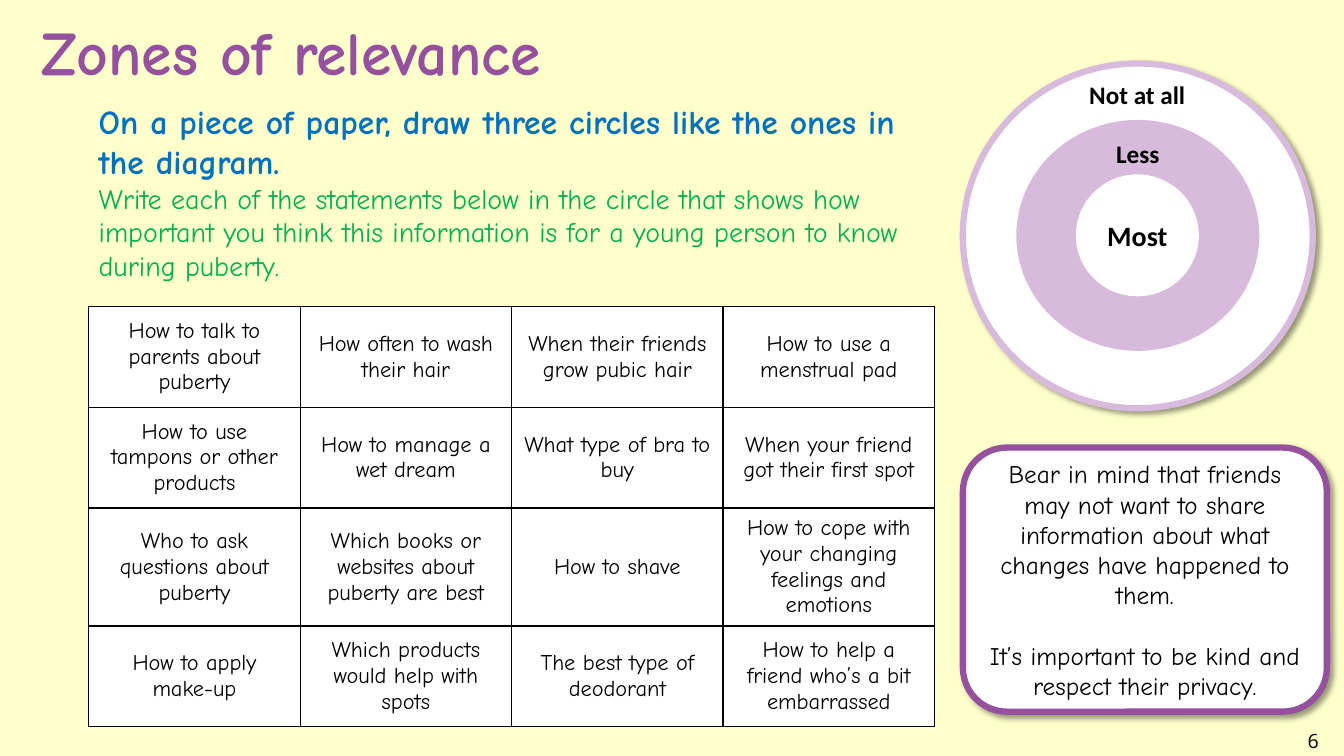
"""Build the 'Zones of relevance' activity slide."""
from lxml import etree
from pptx import Presentation
from pptx.dml.color import RGBColor
from pptx.enum.shapes import MSO_SHAPE
from pptx.enum.text import MSO_ANCHOR, PP_ALIGN
from pptx.oxml import parse_xml
from pptx.oxml.ns import nsdecls, qn
from pptx.util import Inches, Pt

OVAL, ROUNDED = MSO_SHAPE.OVAL, MSO_SHAPE.ROUNDED_RECTANGLE
LEFT, CENTER = PP_ALIGN.LEFT, PP_ALIGN.CENTER
TOP, MIDDLE = MSO_ANCHOR.TOP, MSO_ANCHOR.MIDDLE

THEME = {
    "paper": "FFFFCC", "white": "FFFFFF", "black": "000000",
    "purple": "95519E", "lilac": "D8BADC", "outline": 4.5, "grid": 1,
    "title": {"size": 44, "name": "Comic Neue", "color": "95519E", "bold": True},
    "task": {"size": 24, "name": "Comic Neue", "color": "0070C0", "bold": True},
    "detail": {"size": 20, "name": "Comic Neue", "color": "00B050", "bold": False},
    "statement": {"size": 16, "name": "Comic Neue", "color": "000000", "bold": False},
    "advice": {"size": 18, "name": "Comic Neue", "color": "000000", "bold": False},
    "zone": {"size": 18, "name": "Calibri", "color": "000000", "bold": True},
    "core": {"size": 20, "name": "Calibri", "color": "000000", "bold": True},
    "number": {"size": 14, "name": "Open Sans", "color": "000000", "bold": False},
}

TEXTS = [
    ((12.87, 7.18, 0.46, 0.4), [("6", "number")]),
    ((0.31, 0.09, 11.72, 0.84), [("Zones of relevance", "title")]),
    ((0.88, 0.95, 8.39, 1.92), [
        ("On a piece of paper, draw three circles like the ones in the diagram.", "task"),
        ("Write each of the statements below in the circle that shows how important "
         "you think this information is for a young person to know during puberty.", "detail"),
    ]),
]
RINGS = [
    ((9.55, 0.63, 3.47, 3.42), "white", "lilac", []),
    ((10.08, 1.19, 2.41, 2.29), "lilac", None, []),
    ((10.67, 1.73, 1.22, 1.21), "white", None, [("Most", "core")]),
]
ZONE_LABELS = [
    ((10.97, 1.32, 0.63, 0.4), [("Less", "zone")]),
    ((10.7, 0.74, 1.16, 0.4), [("Not at all", "zone")]),
]
ADVICE_PLACE = (9.55, 4.44, 3.61, 2.62)
ADVICE = [
    ("Bear in mind that friends may not want to share information about what "
     "changes have happened to them.", "advice"),
    ("It’s important to be kind and respect their privacy.", "advice"),
]
ADVICE_GAP = 21.5
STATEMENTS = [
    ["How to talk to parents about puberty", "How often to wash their hair",
     "When their friends grow pubic hair", "How to use a menstrual pad"],
    ["How to use tampons or other products", "How to manage a wet dream",
     "What type of bra to buy", "When your friend got their first spot"],
    ["Who to ask questions about puberty", "Which books or websites about puberty are best",
     "How to shave", "How to cope with your changing feelings and emotions"],
    ["How to apply make-up", "Which products would help with spots",
     "The best type of deodorant", "How to help a friend who’s a bit embarrassed"],
]
TABLE_PLACE = (0.88, 3.04, 8.39, 4.17)
ROW_HEIGHTS = (1.0, 1.0, 1.17, 1.0)


def inches(place):
    return [Inches(length) for length in place]


def paint(fill, color):
    fill.solid()
    fill.fore_color.rgb = RGBColor.from_string(THEME[color])


def write(frame, paragraphs, align=LEFT, gap=0):
    for index, (text, style) in enumerate(paragraphs):
        para = frame.paragraphs[0] if index == 0 else frame.add_paragraph()
        para.alignment = align
        if index:
            para.space_before = Pt(gap)
        span = para.add_run()
        span.text = text
        look = THEME[style]
        values = {"size": Pt(look["size"]), "name": look["name"], "bold": look["bold"]}
        for name, value in values.items():
            setattr(span.font, name, value)
        span.font.color.rgb = RGBColor.from_string(look["color"])


def add_text(page, place, paragraphs, align=LEFT, wrap=True):
    frame = page.shapes.add_textbox(*inches(place)).text_frame
    frame.word_wrap = wrap
    frame.vertical_anchor = TOP
    write(frame, paragraphs, align)


def add_panel(page, kind, place, fill, line, paragraphs, gap=0):
    panel = page.shapes.add_shape(kind, *inches(place))
    panel.shadow.inherit = False
    paint(panel.fill, fill)
    if line:
        paint(panel.line.fill, line)
        panel.line.width = Pt(THEME["outline"])
        effects = panel._element.spPr.find(qn("a:effectLst"))
        effects.append(parse_xml(
            f'<a:outerShdw {nsdecls("a")} blurRad="{Pt(4)}" dist="{Pt(3)}" dir="2700000" '
            f'algn="tl" rotWithShape="0"><a:srgbClr val="{THEME["black"]}">'
            '<a:alpha val="40000"/></a:srgbClr></a:outerShdw>'))
    else:
        panel.line.fill.background()
    panel.text_frame.word_wrap = True
    panel.text_frame.vertical_anchor = MIDDLE
    write(panel.text_frame, paragraphs, CENTER, gap)


def add_borders(cell):
    properties = cell._tc.get_or_add_tcPr()
    for index, side in enumerate(("lnL", "lnR", "lnT", "lnB")):
        border = etree.Element(qn(f"a:{side}"), w=str(Pt(THEME["grid"])))
        solid = etree.SubElement(border, qn("a:solidFill"))
        etree.SubElement(solid, qn("a:srgbClr"), val=THEME["black"])
        properties.insert(index, border)


def add_statements(page):
    columns = len(STATEMENTS[0])
    table = page.shapes.add_table(len(STATEMENTS), columns, *inches(TABLE_PLACE)).table
    table.first_row = table.horz_banding = False
    for column in table.columns:
        column.width = Inches(TABLE_PLACE[2] / columns)
    for row, height, texts in zip(table.rows, ROW_HEIGHTS, STATEMENTS):
        row.height = Inches(height)
        for cell, text in zip(row.cells, texts):
            paint(cell.fill, "white")
            add_borders(cell)
            cell.vertical_anchor = MIDDLE
            write(cell.text_frame, [(text, "statement")], CENTER)


def main():
    deck = Presentation()
    deck.slide_width, deck.slide_height = Inches(13.33), Inches(7.5)
    page = deck.slides.add_slide(deck.slide_layouts[6])
    paint(page.background.fill, "paper")
    for place, paragraphs in TEXTS:
        add_text(page, place, paragraphs)
    for place, fill, line, paragraphs in RINGS:
        add_panel(page, OVAL, place, fill, line, paragraphs)
    for place, paragraphs in ZONE_LABELS:
        add_text(page, place, paragraphs, CENTER, wrap=False)
    add_statements(page)
    add_panel(page, ROUNDED, ADVICE_PLACE, "white", "purple", ADVICE, ADVICE_GAP)
    deck.save("out.pptx")


if __name__ == "__main__":
    main()
